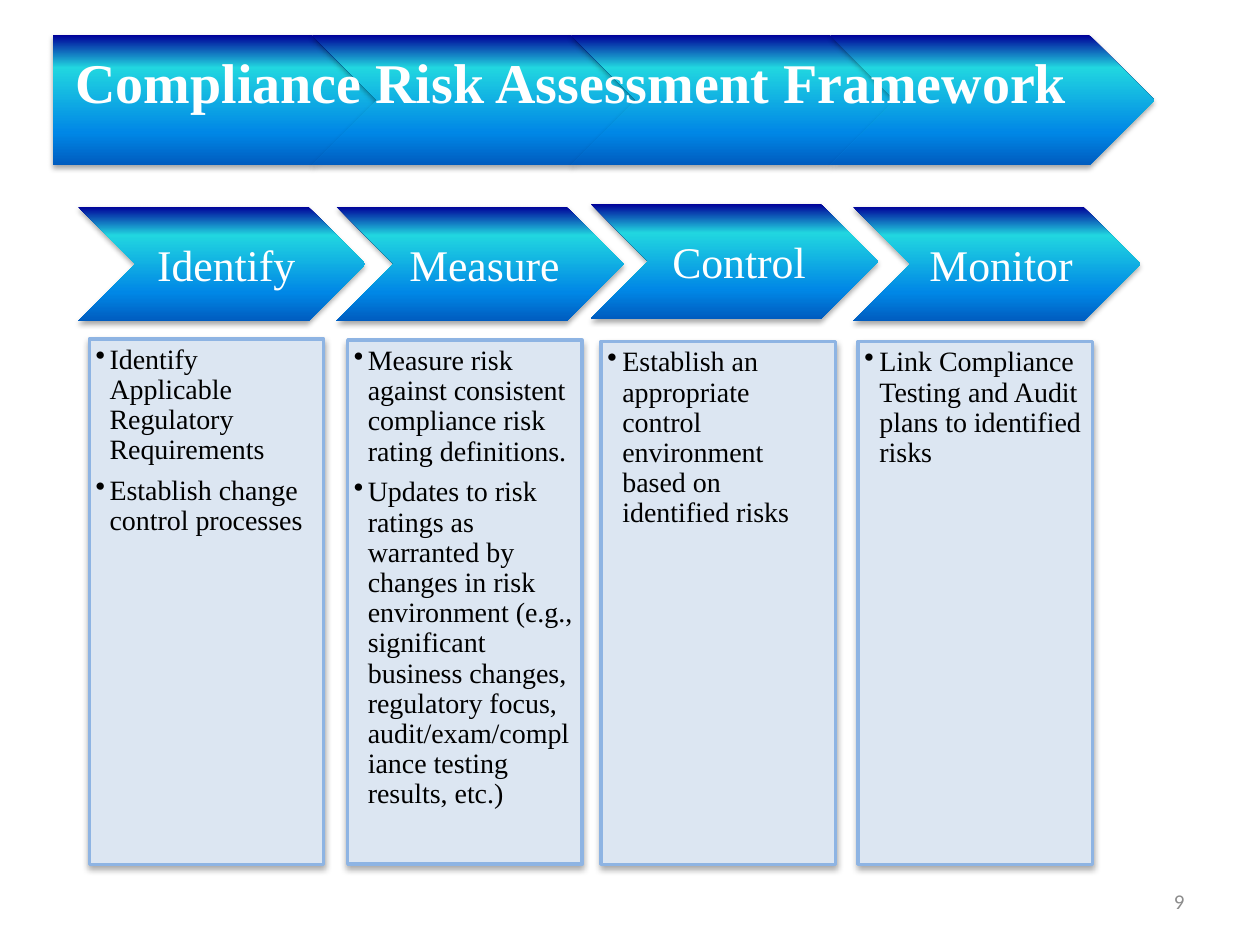
"""Build the compliance risk assessment framework slide."""
from pptx import Presentation
from pptx.dml.color import RGBColor
from pptx.enum.shapes import MSO_SHAPE
from pptx.enum.text import MSO_ANCHOR, PP_ALIGN
from pptx.oxml.ns import qn
from pptx.util import Inches, Pt
from lxml.etree import SubElement

TITLE = "Compliance Risk Assessment Framework"
PAGE_NUMBER = "9"
SERIF = "Times New Roman"
COLORS = {"white": "FFFFFF", "text": "000000", "number": "8C8C8C",
          "panel": "DCE6F2", "border": "8EB4E3", "shadow": "000000"}
GRADIENT = [(0, "000099"), (25, "21D6E0"), (75, "0087E6"), (100, "005CBF")]
ARROW_SHADOW = (35, 3.1, 1.8)
PANEL_SHADOW = (32, 3.5, 2.2)
PANEL_BOTTOM = 6.86

STAGES = [
    {"name": "Identify", "arrow": (0.62, 1.64), "panel": (0.71, 2.69),
     "indent": 0.11, "level": 0, "before": 6,
     "points": ["Identify Applicable Regulatory Requirements",
                "Establish change control processes"]},
    {"name": "Measure", "arrow": (2.67, 1.64), "panel": (2.76, 2.7),
     "indent": 0.11, "level": 0, "before": 6,
     "points": ["Measure risk against consistent compliance risk rating definitions.",
                "Updates to risk ratings as warranted by changes in risk environment "
                "(e.g., significant business changes, regulatory focus, "
                "audit/exam/compliance testing results, etc.)"]},
    {"name": "Control", "arrow": (4.69, 1.62), "panel": (4.77, 2.71),
     "indent": 0.12, "level": 1, "before": 6,
     "points": ["Establish an appropriate control environment based on identified risks"]},
    {"name": "Monitor", "arrow": (6.77, 1.64), "panel": (6.81, 2.71),
     "indent": 0.12, "level": 0, "before": 0,
     "points": ["Link Compliance Testing and Audit plans to identified risks"]},
]


def color(name):
    return RGBColor.from_string(COLORS[name])


def add_shadow(shape, opacity, blur, distance):
    shape.shadow.inherit = False
    effects = shape._element.spPr.find(qn("a:effectLst"))
    outer = SubElement(effects, qn("a:outerShdw"), blurRad=str(Pt(blur)),
                       dist=str(Pt(distance)), dir="5400000", rotWithShape="0")
    shade = SubElement(outer, qn("a:srgbClr"), val=COLORS["shadow"])
    SubElement(shade, qn("a:alpha"), val=str(opacity * 1000))


def add_arrow(shapes, kind, *place):
    arrow = shapes.add_shape(kind, *map(Inches, place))
    arrow.fill.gradient()
    arrow.fill.gradient_angle = 270
    stops = arrow._element.spPr.find(".//" + qn("a:gsLst"))
    for stop in list(stops):
        stops.remove(stop)
    for position, value in GRADIENT:
        stop = SubElement(stops, qn("a:gs"), pos=str(position * 1000))
        SubElement(stop, qn("a:srgbClr"), val=value)
    arrow.line.fill.background()
    add_shadow(arrow, *ARROW_SHADOW)


def set_frame(frame, anchor, margins):
    frame.word_wrap = True
    frame.vertical_anchor = anchor
    (frame.margin_left, frame.margin_top,
     frame.margin_right, frame.margin_bottom) = map(Inches, margins)


def set_font(paragraph, face, size, name, bold=False):
    font = paragraph.font
    font.name, font.size, font.bold = face, Pt(size), bold
    font.color.rgb = color(name)


def add_label(shapes, text, place, face, size, name, align=PP_ALIGN.LEFT,
              anchor=MSO_ANCHOR.MIDDLE, margins=(0.1, 0.05, 0.1, 0.05), bold=False):
    box = shapes.add_textbox(*map(Inches, place))
    set_frame(box.text_frame, anchor, margins)
    paragraph = box.text_frame.paragraphs[0]
    paragraph.text = text
    paragraph.alignment = align
    set_font(paragraph, face, size, name, bold)


def add_panel(shapes, stage):
    left, top = stage["panel"]
    panel = shapes.add_shape(MSO_SHAPE.RECTANGLE, Inches(left), Inches(top),
                             Inches(1.86), Inches(PANEL_BOTTOM - top))
    panel.fill.solid()
    panel.fill.fore_color.rgb = color("panel")
    panel.line.color.rgb = color("border")
    panel.line.width = Pt(2)
    add_shadow(panel, *PANEL_SHADOW)
    frame = panel.text_frame
    set_frame(frame, MSO_ANCHOR.TOP, (0.05,) * 4)
    for index, point in enumerate(stage["points"]):
        paragraph = frame.add_paragraph() if index else frame.paragraphs[0]
        paragraph.text = point
        paragraph.level = stage["level"]
        paragraph.alignment = PP_ALIGN.LEFT
        paragraph.line_spacing = 0.9
        paragraph.space_before = Pt(stage["before"])
        set_font(paragraph, SERIF, 16, "text")
        properties = paragraph._p.get_or_add_pPr()
        indent = Inches(stage["indent"])
        properties.set("marL", str(indent))
        properties.set("indent", str(-indent))
        bullet = properties.makeelement(qn("a:buChar"), {"char": "•"})
        properties.find(qn("a:defRPr")).addprevious(bullet)


def main():
    deck = Presentation()
    deck.slide_width, deck.slide_height = Inches(10), Inches(7.5)
    page = deck.slides.add_slide(deck.slide_layouts[6])
    steps = page.shapes.add_group_shape().shapes
    for stage in STAGES:
        place = (*stage["arrow"], 2.28, 0.91)
        add_arrow(steps, MSO_SHAPE.CHEVRON, *place)
        add_label(steps, stage["name"], place, SERIF, 25, "white",
                  PP_ALIGN.CENTER, margins=(0.11, 0.04, 0.04, 0.04))
    for stage in STAGES:
        add_panel(page.shapes, stage)
    add_label(page.shapes, PAGE_NUMBER, (7.17, 6.95, 2.33, 0.4), "Calibri", 12,
              "number", PP_ALIGN.RIGHT)
    banner = page.shapes.add_group_shape().shapes
    for index in range(len(STAGES)):
        kind = MSO_SHAPE.CHEVRON if index else MSO_SHAPE.PENTAGON
        add_arrow(banner, kind, 0.42 + index * 2.057, 0.28, 2.57, 1.03)
    add_label(page.shapes, TITLE, (0.5, 0.33, 9.05, 0.82), SERIF, 32, "white",
              anchor=MSO_ANCHOR.TOP, bold=True)
    deck.save("out.pptx")


if __name__ == "__main__":
    main()
